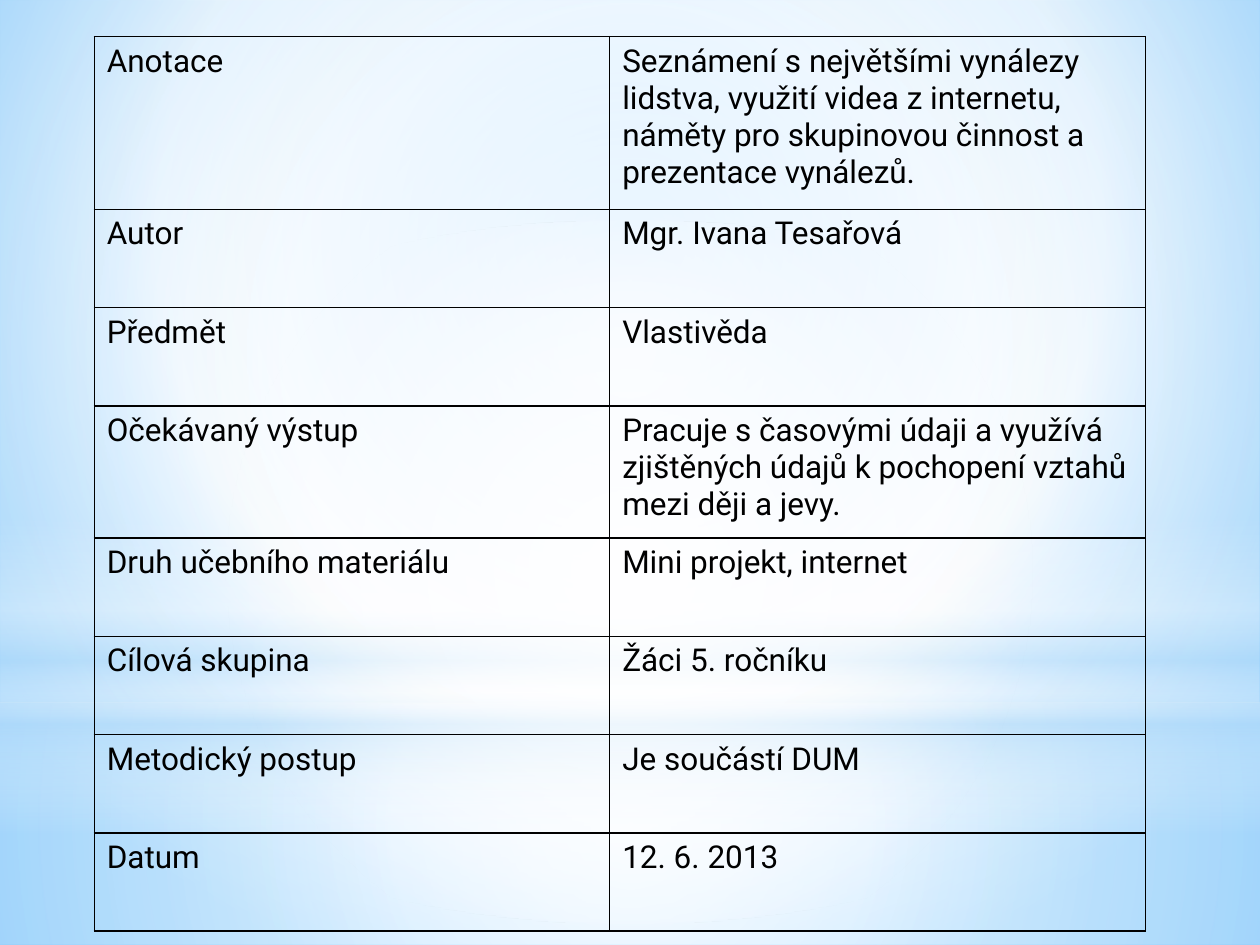
from pptx import Presentation
from pptx.dml.color import RGBColor
from pptx.enum.shapes import MSO_SHAPE as Preset
from pptx.oxml.ns import qn
from pptx.util import Cm, Pt
from lxml.etree import SubElement as Sub

BLACK = RGBColor(0x00, 0x00, 0x00)
WHITE = RGBColor(0xFF, 0xFF, 0xFF)
HAZE = RGBColor(0xB4, 0xDC, 0xFA)
SKY = RGBColor(0x9E, 0xD5, 0xFF)
AZURE = RGBColor(0x5B, 0xB9, 0xFF)

CENTRE = (50, 50, 50, 50)
WIDTH, HEIGHT = 25.4, 19.05
HORIZON = 14.17

COLUMNS = (10.39, 10.8)
ROW = 1.98
RECORD = [
    ("Anotace", "Seznámení s největšími vynálezy lidstva, využití videa z internetu, "
     "náměty pro skupinovou činnost a prezentace vynálezů.", 3.48),
    ("Autor", "Mgr. Ivana Tesařová", ROW),
    ("Předmět", "Vlastivěda", ROW),
    ("Očekávaný výstup", "Pracuje s časovými údaji a využívá zjištěných údajů "
     "k pochopení vztahů mezi ději a jevy.", 2.67),
    ("Druh učebního materiálu", "Mini projekt, internet", ROW),
    ("Cílová skupina", "Žáci 5. ročníku", ROW),
    ("Metodický postup", "Je součástí DUM", ROW),
    ("Datum", "12. 6. 2013", ROW),
]


class SlideBuilder:
    font = {"name": "Roboto", "size": Pt(18), "bold": False}
    table_flags = {"first_row": False, "horz_banding": False}
    border = Pt(1)

    def __init__(self, slide):
        self.slide = slide

    def apply(self, target, values):
        for attribute, value in values.items():
            setattr(target, attribute, value)

    def gradient(self, fill, element, stops, focus=None, angle=0):
        fill.gradient()
        gradient = element.find(".//" + qn("a:gradFill"))
        for child in list(gradient):
            gradient.remove(child)
        stop_list = Sub(gradient, qn("a:gsLst"))
        for position, colour, opacity in stops:
            stop = Sub(stop_list, qn("a:gs"), pos=str(position * 1000))
            tint = Sub(stop, qn("a:srgbClr"), val=str(colour))
            if opacity < 100:
                Sub(tint, qn("a:alpha"), val=str(opacity * 1000))
        if focus:
            circle = Sub(gradient, qn("a:path"), path="circle")
            Sub(circle, qn("a:fillToRect"),
                {side: str(share * 1000) for side, share in zip("ltrb", focus)})
        else:
            Sub(gradient, qn("a:lin"), ang=str(angle * 60000), scaled="0")

    def background(self, stops, focus):
        self.gradient(self.slide.background.fill, self.slide._element, stops, focus)

    def glow(self, preset, top, height, stops, focus=None, angle=0):
        glow = self.slide.shapes.add_shape(preset, 0, Cm(top), Cm(WIDTH), Cm(height))
        glow.shadow.inherit = False
        glow.line.fill.background()
        self.gradient(glow.fill, glow._element, stops, focus, angle)

    def outline(self, cell):
        properties = cell._tc.get_or_add_tcPr()
        for index, side in enumerate(("lnL", "lnR", "lnT", "lnB")):
            line = Sub(properties, qn("a:" + side), w=str(self.border))
            Sub(Sub(line, qn("a:solidFill")), qn("a:srgbClr"), val=str(BLACK))
            properties.insert(index, line)

    def cell(self, cell, text):
        cell.text = text
        cell.fill.background()
        font = cell.text_frame.paragraphs[0].runs[0].font
        self.apply(font, self.font)
        font.color.rgb = BLACK
        self.outline(cell)

    def table(self, left, top, columns, record):
        heights = [height for *_, height in record]
        table = self.slide.shapes.add_table(
            len(record), len(columns), Cm(left), Cm(top),
            Cm(sum(columns)), Cm(sum(heights))).table
        self.apply(table, self.table_flags)
        for column, width in zip(table.columns, columns):
            column.width = Cm(width)
        for row, (label, detail, height) in zip(table.rows, record):
            row.height = Cm(height)
            for cell, text in zip(row.cells, (label, detail)):
                self.cell(cell, text)


def main():
    deck = Presentation()
    deck.slide_width, deck.slide_height = Cm(WIDTH), Cm(HEIGHT)
    builder = SlideBuilder(deck.slides.add_slide(deck.slide_layouts[6]))

    builder.background([(0, SKY, 100), (60, WHITE, 100), (100, AZURE, 100)],
                       (20, 10, 20, 60))
    builder.glow(Preset.RECTANGLE, HORIZON, HEIGHT - HORIZON,
                 [(0, WHITE, 91), (37, WHITE, 76), (100, HAZE, 79)], CENTRE)
    builder.glow(Preset.RECTANGLE, 0, HORIZON,
                 [(0, WHITE, 89), (48, WHITE, 62), (100, HAZE, 79)], CENTRE)
    builder.glow(Preset.RECTANGLE, 10.46, 6.35,
                 [(0, WHITE, 0), (29, WHITE, 30), (45, HAZE, 40),
                  (55, WHITE, 26), (65, HAZE, 60), (100, WHITE, 0)], angle=90)
    builder.glow(Preset.OVAL, 4.45, HORIZON,
                 [(0, WHITE, 100), (56, WHITE, 0)], CENTRE)
    builder.table(1.9, 0.74, COLUMNS, RECORD)

    deck.save("out.pptx")


if __name__ == "__main__":
    main()
